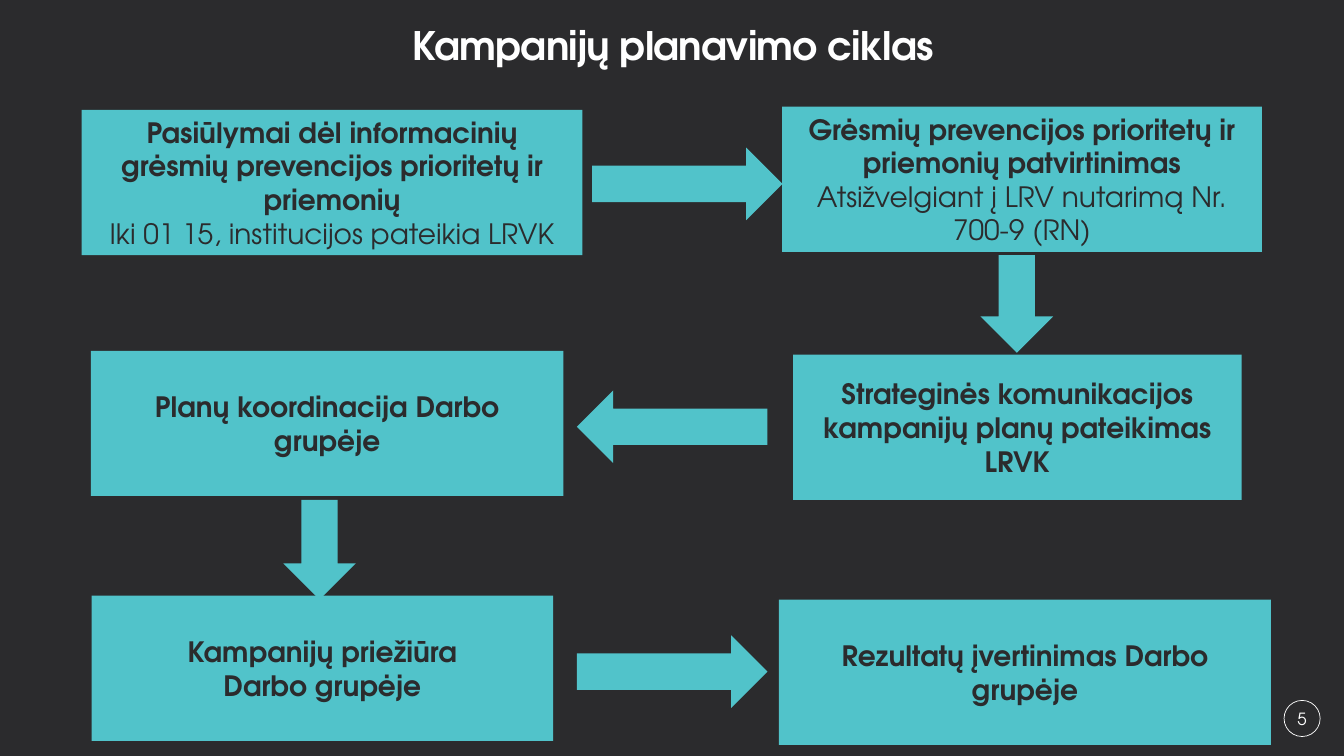
from pptx import Presentation
from pptx.dml.color import RGBColor
from pptx.enum.shapes import MSO_SHAPE as Shape
from pptx.enum.text import MSO_ANCHOR as Anchor, PP_ALIGN as Align
from pptx.util import Cm, Pt

DARK, TEAL, WHITE = "2B2B2D", "51C3CA", "FFFFFF"
BOX_HEIGHT = 3.66
ARROW_WIDTH = 1.83


def colour(value):
    return RGBColor.from_string(value)


class CyclePage:
    """Holds the style and the current slide."""

    font = "TeX Gyre Adventor"

    def __init__(self, deck):
        self.page = deck.slides.add_slide(deck.slide_layouts[6])
        background = self.page.background.fill
        background.solid()
        background.fore_color.rgb = colour(DARK)

    def add_span(self, para, text, size, ink, bold=False):
        para.alignment = Align.CENTER
        span = para.add_run()
        span.text = text
        span.font.name = self.font
        span.font.size = Pt(size)
        span.font.bold = bold
        span.font.color.rgb = colour(ink)
        return span

    def shape(self, kind, left, top, width, height):
        shape = self.page.shapes.add_shape(
            kind, Cm(left), Cm(top), Cm(width), Cm(height))
        shape.shadow.inherit = False
        return shape

    def filled(self, kind, left, top, width, height):
        shape = self.shape(kind, left, top, width, height)
        shape.fill.solid()
        shape.fill.fore_color.rgb = colour(TEAL)
        shape.line.fill.background()
        return shape

    def title(self, text):
        box = self.page.shapes.add_textbox(Cm(2.57), Cm(0.08), Cm(28.78), Cm(2.26))
        frame = box.text_frame
        frame.word_wrap = True
        frame.vertical_anchor = Anchor.MIDDLE
        frame.margin_left = frame.margin_right = 0
        frame.margin_top = frame.margin_bottom = 0
        para = frame.paragraphs[0]
        para.line_spacing = 0.86
        span = self.add_span(para, text, 28, WHITE, bold=True)
        span.font._element.set("spc", "-50")

    def step(self, left, top, width, *lines):
        """Draw a box; each line is a text and whether it is bold."""
        frame = self.filled(Shape.RECTANGLE, left, top, width, BOX_HEIGHT).text_frame
        frame.word_wrap = True
        frame.vertical_anchor = Anchor.MIDDLE
        for index, (text, bold) in enumerate(lines):
            para = frame.add_paragraph() if index else frame.paragraphs[0]
            self.add_span(para, text, 20, DARK, bold)

    def across(self, kind, left, top):
        self.filled(kind, left, top, 4.8, ARROW_WIDTH)

    def down(self, left, top, length):
        self.filled(Shape.DOWN_ARROW, left, top, ARROW_WIDTH, length)

    def number(self, text):
        badge = self.shape(Shape.OVAL, 32.36, 17.65, 0.91, 0.91)
        badge.fill.background()
        badge.line.color.rgb = colour(WHITE)
        badge.line.width = Pt(0.5)
        frame = badge.text_frame
        frame.word_wrap = False
        frame.vertical_anchor = Anchor.MIDDLE
        self.add_span(frame.paragraphs[0], text, 12, WHITE)


def main():
    deck = Presentation()
    deck.slide_width, deck.slide_height = Cm(33.87), Cm(19.05)
    cycle = CyclePage(deck)

    # Heading and page number
    cycle.number("5")
    cycle.title("Kampanijų planavimo ciklas")

    # Steps of the cycle, in order
    cycle.step(2.06, 2.77, 12.62,
               ("Pasiūlymai dėl informacinių grėsmių prevencijos prioritetų ir priemonių", True),
               ("Iki 01 15, institucijos pateikia LRVK", False))
    cycle.step(19.71, 2.69, 12.09,
               ("Grėsmių prevencijos prioritetų ir priemonių patvirtinimas", True),
               ("Atsižvelgiant į LRV nutarimą Nr. 700-9 (RN)", False))
    cycle.step(19.99, 8.94, 11.3,
               ("Strateginės komunikacijos kampanijų planų pateikimas LRVK", True))
    cycle.step(2.29, 8.84, 11.91, ("Planų koordinacija Darbo grupėje", True))
    cycle.step(2.31, 15.01, 11.63,
               ("Kampanijų priežiūra", True), ("Darbo grupėje", True))
    cycle.step(19.63, 15.11, 12.4, ("Rezultatų įvertinimas Darbo grupėje", True))

    # Arrows between the steps
    cycle.across(Shape.RIGHT_ARROW, 14.92, 3.72)
    cycle.down(24.71, 6.43, 2.46)
    cycle.across(Shape.LEFT_ARROW, 14.54, 9.84)
    cycle.down(7.14, 12.6, 2.51)
    cycle.across(Shape.RIGHT_ARROW, 14.54, 16.01)

    deck.save("out.pptx")


if __name__ == "__main__":
    main()
